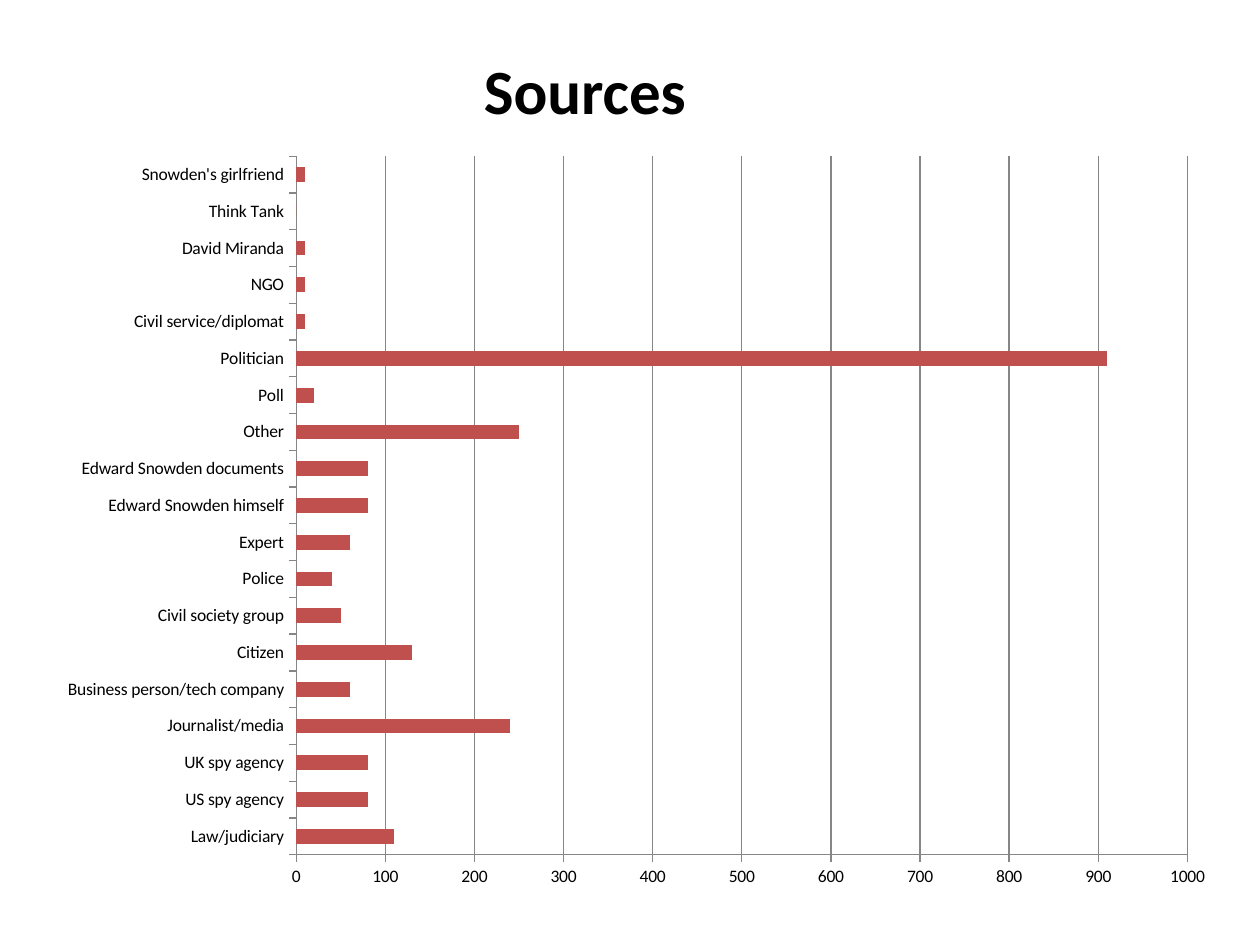
from dataclasses import dataclass

from pptx import Presentation
from pptx.chart.data import CategoryChartData as Data
from pptx.dml.color import RGBColor as RGB
from pptx.enum.chart import XL_CHART_TYPE as Kind, XL_TICK_MARK as Tick
from pptx.enum.text import MSO_ANCHOR as Anchor, PP_ALIGN as Align
from pptx.util import Inches, Pt


@dataclass(frozen=True)
class Theme:
    font: str = "Calibri"
    ink: RGB = RGB(0, 0, 0)
    bar: RGB = RGB(0xC0, 0x50, 0x4D)
    line: RGB = RGB(0x86, 0x86, 0x86)
    head: Pt = Pt(36)
    label: Pt = Pt(10)
    rule: Pt = Pt(0.75)


class Deck:
    def __init__(self, theme):
        self.theme = theme
        self.prs = Presentation()
        self.prs.slide_width, self.prs.slide_height = Inches(10), Inches(7.5)
        self.slide = self.prs.slides.add_slide(self.prs.slide_layouts[5])

    def box(self, x, y, w, h):
        """Turn percentages of the slide into left, top, width, height."""
        wide, high = self.prs.slide_width, self.prs.slide_height
        sides = ((x, wide), (y, high), (w, wide), (h, high))
        return [round(part * side / 100) for part, side in sides]

    def style(self, font, size, bold=False):
        font.name, font.size, font.bold = self.theme.font, size, bold
        font.color.rgb = self.theme.ink

    def title(self, text, *area):
        shape = self.slide.shapes.title
        shape.left, shape.top, shape.width, shape.height = self.box(*area)
        frame = shape.text_frame
        frame.text = text
        frame.vertical_anchor = Anchor.TOP
        para = frame.paragraphs[0]
        para.alignment = Align.LEFT
        self.style(para.runs[0].font, self.theme.head, bold=True)

    def rule(self, line):
        line.color.rgb, line.width = self.theme.line, self.theme.rule

    def bars(self, rows, top, step, *area):
        data = Data(number_format="###0")
        data.categories = [name for name, count in rows]
        data.add_series("Series 1", [count for name, count in rows])
        chart = self.slide.shapes.add_chart(
            Kind.BAR_CLUSTERED, *self.box(*area), data).chart
        chart.has_legend = chart.has_title = False
        self.style(chart.font, self.theme.label)

        # Bars
        plot = chart.plots[0]
        plot.gap_width, plot.vary_by_categories = 150, False
        fill = plot.series[0].format.fill
        fill.solid()
        fill.fore_color.rgb = self.theme.bar

        # Axes and grid
        for axis in (chart.category_axis, chart.value_axis):
            axis.major_tick_mark, axis.minor_tick_mark = Tick.OUTSIDE, Tick.NONE
            self.rule(axis.format.line)
        scale = chart.value_axis
        scale.minimum_scale, scale.maximum_scale = 0, top
        scale.major_unit = step
        scale.has_major_gridlines = True
        self.rule(scale.major_gridlines.format.line)
        scale.tick_labels.number_format = "###0"
        scale.tick_labels.number_format_is_linked = False


# Listed from the bottom bar to the top one
SOURCES = [
    ("Law/judiciary", 110),
    ("US spy agency", 80),
    ("UK spy agency", 80),
    ("Journalist/media", 240),
    ("Business person/tech company", 60),
    ("Citizen", 130),
    ("Civil society group", 50),
    ("Police", 40),
    ("Expert", 60),
    ("Edward Snowden himself", 80),
    ("Edward Snowden documents", 80),
    ("Other", 250),
    ("Poll", 20),
    ("Politician", 910),
    ("Civil service/diplomat", 10),
    ("NGO", 10),
    ("David Miranda", 10),
    ("Think Tank", 0),
    ("Snowden's girlfriend", 10),
]


def main():
    deck = Deck(Theme())
    deck.title("Sources", 37.4, 4.8, 48, 9.47)
    deck.bars(SOURCES, 1000, 100, 3.5, 14.93, 94, 80.53)
    deck.prs.save("out.pptx")


if __name__ == "__main__":
    main()
